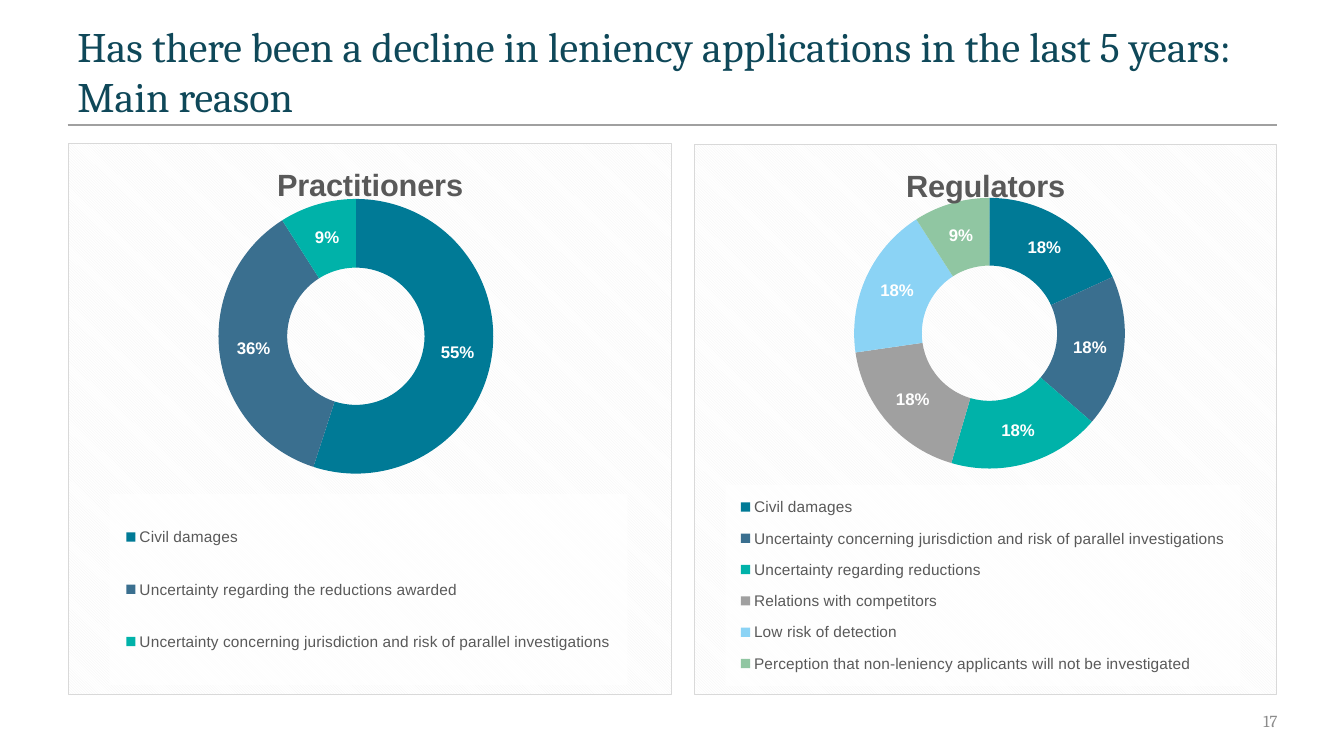
from dataclasses import dataclass

from pptx import Presentation
from pptx.chart.data import CategoryChartData
from pptx.dml.color import RGBColor
from pptx.enum.chart import XL_CHART_TYPE, XL_LEGEND_POSITION
from pptx.enum.text import MSO_ANCHOR, PP_ALIGN
from pptx.oxml import parse_xml
from pptx.oxml.ns import nsdecls, qn
from pptx.util import Inches, Pt


@dataclass(frozen=True)
class Theme:
    heading_font: str = "Cambria"
    chart_font: str = "Arial"
    title: str = "0F4859"
    rule: str = "A0A0A0"
    number: str = "8C8C8C"
    chart_text: str = "595959"
    chart_base: str = "000000"
    label: str = "FFFFFF"
    hatch: str = "F2F2F2"
    paper: str = "FFFFFF"
    border: str = "D9D9D9"
    slices: tuple = ("007A96", "3A6F8F", "00B2A9", "A0A0A0", "8BD3F5", "90C6A2")
    title_size: int = 30
    number_size: int = 12
    chart_title_size: int = 22
    label_size: int = 12
    legend_size: int = 11
    chart_size: int = 10


THEME = Theme()
MARGIN, CONTENT_W = 0.67, 12

# Each panel: heading, slide box, plot and legend boxes in inches inside it, data
PANELS = [
    ("Practitioners", (MARGIN, 1.42, 6, 5.48),
     (1.49, 0.55, 2.74, 2.73), (0.41, 3.48, 5.15, 1.9),
     [("Civil damages", 55),
      ("Uncertainty regarding the reductions awarded", 36),
      ("Uncertainty concerning jurisdiction and risk of parallel investigations", 9)]),
    ("Regulators", (6.88, 1.43, 5.79, 5.47),
     (1.59, 0.53, 2.69, 2.69), (0.31, 3.38, 5.12, 2),
     [("Civil damages", 18),
      ("Uncertainty concerning jurisdiction and risk of parallel investigations", 18),
      ("Uncertainty regarding reductions", 18),
      ("Relations with competitors", 18),
      ("Low risk of detection", 18),
      ("Perception that non-leniency applicants will not be investigated", 9)]),
]


def style(font, name, size, color, bold=False):
    font.name, font.size, font.bold = name, Pt(size), bold
    font.color.rgb = RGBColor.from_string(color)


def add_text(slide, box, text, size, color, anchor, align=PP_ALIGN.LEFT, right=0.1):
    tf = slide.shapes.add_textbox(*map(Inches, box)).text_frame
    tf.word_wrap = True
    tf.vertical_anchor = anchor
    tf.margin_right = Inches(right)
    p = tf.paragraphs[0]
    p.text, p.alignment = text, align
    style(p.font, THEME.heading_font, size, color)


def add_header(slide, box, text):
    left, top, width, height = box
    # Rule under the title
    y = Inches(top + height - 0.01)
    rule = slide.shapes.add_connector(1, Inches(left), y, Inches(left + width), y)
    rule.line.color.rgb = RGBColor.from_string(THEME.rule)
    rule.line.width = Pt(1)
    rule._element.spPr.append(parse_xml(f"<a:effectLst {nsdecls('a')}/>"))
    # Title grows upwards from the rule
    add_text(slide, box, text, THEME.title_size, THEME.title, MSO_ANCHOR.BOTTOM)


def layout_xml(part_box, chart_box, inner=False):
    width, height = chart_box[2:]
    target = '<c:layoutTarget val="inner"/>' if inner else ""
    modes = "".join(f'<c:{k}Mode val="edge"/>' for k in "xy")
    sizes = "".join(f'<c:{k} val="{length / full}"/>' for k, length, full
                    in zip("xywh", part_box, (width, height) * 2))
    return parse_xml(f"<c:layout {nsdecls('c')}><c:manualLayout>{target}{modes}{sizes}"
                     "</c:manualLayout></c:layout>")


def sppr_xml(content):
    return parse_xml(f"<c:spPr {nsdecls('c', 'a')}>{content}</c:spPr>")


def add_doughnut(slide, box, heading, plot_box, legend_box, rows):
    data = CategoryChartData()
    data.categories = [name for name, _ in rows]
    data.add_series(heading, [value for _, value in rows])
    chart = slide.shapes.add_chart(
        XL_CHART_TYPE.DOUGHNUT, *map(Inches, box), data).chart
    style(chart.font, THEME.chart_font, THEME.chart_size, THEME.chart_base)

    # Heading
    chart.has_title = True
    p = chart.chart_title.text_frame.paragraphs[0]
    p.text = heading
    style(p.font, THEME.chart_font, THEME.chart_title_size, THEME.chart_text, True)

    # Slices and percentages
    plot = chart.plots[0]
    plot.vary_by_categories = True
    for i, color in enumerate(THEME.slices[:len(rows)]):
        fill = plot.series[0].points[i].format.fill
        fill.solid()
        fill.fore_color.rgb = RGBColor.from_string(color)
    labels = plot.series[0].data_labels
    labels.show_percentage, labels.show_value = True, False
    labels.number_format, labels.number_format_is_linked = "0%", False
    style(labels.font, THEME.chart_font, THEME.label_size, THEME.label, True)
    plot._element.find(qn("c:holeSize")).set("val", "70")

    # Plot position
    area = plot._element.getparent()
    for old in area.findall(qn("c:layout")):
        area.remove(old)
    area.insert(0, layout_xml(plot_box, box, inner=True))

    # Legend on a translucent panel
    chart.has_legend = True
    legend = chart.legend
    legend.position = XL_LEGEND_POSITION.BOTTOM
    legend.include_in_layout = False
    style(legend.font, THEME.chart_font, THEME.legend_size, THEME.chart_text)
    node = legend._element
    for old in node.findall(qn("c:layout")):
        node.remove(old)
    node.find(qn("c:legendPos")).addnext(layout_xml(legend_box, box))
    node.find(qn("c:txPr")).addprevious(sppr_xml(
        f'<a:solidFill><a:srgbClr val="{THEME.paper}"><a:alpha val="78000"/>'
        "</a:srgbClr></a:solidFill><a:ln><a:noFill/></a:ln>"))

    # Hatched background and border
    chart._chartSpace.find(qn("c:txPr")).addprevious(sppr_xml(
        '<a:pattFill prst="dkDnDiag">'
        f'<a:fgClr><a:srgbClr val="{THEME.hatch}"/></a:fgClr>'
        f'<a:bgClr><a:srgbClr val="{THEME.paper}"/></a:bgClr></a:pattFill>'
        f'<a:ln w="{Pt(0.75)}"><a:solidFill><a:srgbClr val="{THEME.border}"/>'
        "</a:solidFill></a:ln>"))


def main():
    prs = Presentation()
    prs.slide_width, prs.slide_height = Inches(13.33), Inches(7.5)
    s = prs.slides.add_slide(prs.slide_layouts[6])
    add_header(s, (MARGIN, 0.58, CONTENT_W, 0.67),
               "Has there been a decline in leniency applications "
               "in the last 5 years: Main reason")
    for heading, box, plot_box, legend_box, rows in PANELS:
        add_doughnut(s, box, heading, plot_box, legend_box, rows)
    # Slide number
    add_text(s, (MARGIN + CONTENT_W - 3, 6.95, 3, 0.4), "17", THEME.number_size,
             THEME.number, MSO_ANCHOR.MIDDLE, PP_ALIGN.RIGHT, right=0)
    prs.save("out.pptx")


if __name__ == "__main__":
    main()
